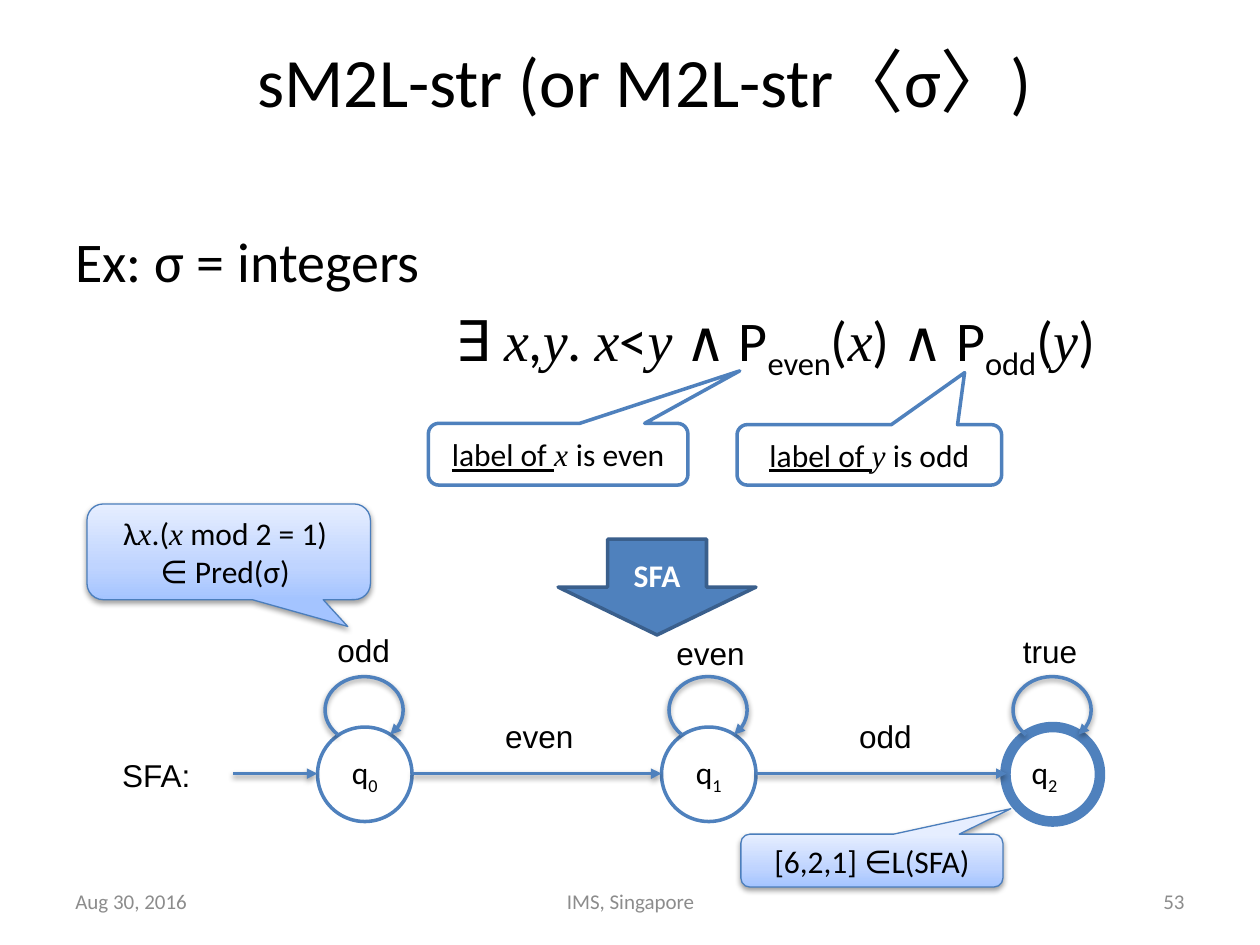
"""Build the slide on sM2L-str formulas and their symbolic automaton."""
from copy import deepcopy

from lxml import etree
from pptx import Presentation
from pptx import util as u
from pptx.dml.color import RGBColor
from pptx.enum import shapes, text
from pptx.oxml.ns import qn

PX = 9144
BLACK = RGBColor(0, 0, 0)
WHITE = RGBColor(255, 255, 255)
GREY = RGBColor(0x8C, 0x8C, 0x8C)
BLUE = RGBColor(0x4F, 0x81, 0xBD)
NAVY = RGBColor(0x3A, 0x5F, 0x8C)
RIM = RGBColor(0x4B, 0x7E, 0xBC)
SKY = [(0, RGBColor(0xA4, 0xC4, 0xFF)),
       (0.35, RGBColor(0xBF, 0xD4, 0xFF)),
       (1, RGBColor(0xE6, 0xEE, 0xFF))]

BASE = {"name": "Calibri", "size": 18, "color": BLACK}
LABEL = {"name": "Arial"}
VARIABLE = {"name": "Times New Roman", "italic": True}
UNDERLINED = {"underline": True}
SUBSCRIPT = {"baseline": -25000}
FOOTER = {"size": 12, "color": GREY}
LEFT, CENTER, RIGHT = (text.PP_ALIGN.LEFT, text.PP_ALIGN.CENTER,
                       text.PP_ALIGN.RIGHT)
TOP, MIDDLE = text.MSO_ANCHOR.TOP, text.MSO_ANCHOR.MIDDLE
KIND = shapes.MSO_SHAPE


def px(*lengths):
    """Turn px lengths into EMU."""
    return [u.Emu(length * PX) for length in lengths]


def add_span(para, words, style):
    """Add one run with its font values."""
    span = para.add_run()
    span.text = words
    for key, value in style.items():
        if key == "color":
            span.font.color.rgb = value
        elif key == "baseline":
            span.font._element.set(key, str(value))
        else:
            setattr(span.font, key, u.Pt(value) if key == "size" else value)


def write(box, paras, style=None, align=LEFT, anchor=MIDDLE, wrap=True):
    """Fill a shape with paragraphs, each a list of (words, style) spans."""
    frame = box.text_frame
    for key, value in {"word_wrap": wrap, "vertical_anchor": anchor}.items():
        setattr(frame, key, value)
    for index, spans in enumerate(paras):
        para = frame.add_paragraph() if index else frame.paragraphs[0]
        para.alignment = align
        for words, extra in spans:
            add_span(para, words, {**BASE, **(style or {}), **extra})
    return frame


def add_text(page, at, paras, **values):
    """Add a text box."""
    return write(page.shapes.add_textbox(*px(*at)), paras, **values)


def add_label(page, at, words):
    """Add an unwrapped Arial label."""
    frame = add_text(page, at, [[(words, LABEL)]], anchor=TOP, wrap=False)
    frame.auto_size = text.MSO_AUTO_SIZE.SHAPE_TO_FIT_TEXT


def set_effects(shape, shadow):
    """Replace the theme shadow by a soft one or by none."""
    effects = etree.SubElement(shape._element.spPr, qn("a:effectLst"))
    if shadow:
        outer = etree.SubElement(effects, qn("a:outerShdw"), blurRad="40000",
                                 dist="20000", dir="5400000", rotWithShape="0")
        color = etree.SubElement(outer, qn("a:srgbClr"), val="000000")
        etree.SubElement(color, qn("a:alpha"), val="38000")


def set_line(shape, color, width, arrow=False):
    """Set the outline and an optional arrowhead at its end."""
    shape.line.color.rgb = color
    shape.line.width = u.Pt(width)
    if arrow:
        etree.SubElement(shape.line._get_or_add_ln(), qn("a:tailEnd"),
                         type="triangle")


def set_gradient(shape, stops):
    """Fill a shape with an upward gradient."""
    shape.fill.gradient()
    shape.fill.gradient_angle = 90
    stop_list = shape._element.spPr.find(".//" + qn("a:gsLst"))
    while len(stop_list) < len(stops):
        stop_list.append(deepcopy(stop_list[0]))
    for stop, (position, color) in zip(shape.fill.gradient_stops, stops):
        stop.position = position
        stop.color.rgb = color


def add_shape(page, kind, at, fill, line, adjust=(), arrow=False, shadow=False):
    """Add a preset shape with its fill, line and effects."""
    shape = page.shapes.add_shape(kind, *px(*at))
    for index, value in enumerate(adjust):
        shape.adjustments[index] = value
    if fill is None:
        shape.fill.background()
    elif isinstance(fill, list):
        set_gradient(shape, fill)
    else:
        shape.fill.solid()
        shape.fill.fore_color.rgb = fill
    set_line(shape, *line, arrow)
    set_effects(shape, shadow)
    return shape


def add_callout(page, at, tip, paras, soft=False):
    """Add a rounded callout, plain white or softly shaded."""
    fill, line = (SKY, (RIM, 0.75)) if soft else (WHITE, (BLUE, 2))
    box = add_shape(page, KIND.ROUNDED_RECTANGULAR_CALLOUT, at, fill, line,
                    (*tip, 0.17), shadow=soft)
    write(box, paras, align=CENTER)


def add_arrow(page, start, end, y):
    """Add a horizontal transition arrow."""
    arrow = page.shapes.add_connector(shapes.MSO_CONNECTOR.STRAIGHT,
                                      *px(start, y, end, y))
    set_line(arrow, BLUE, 2, arrow=True)
    set_effects(arrow, True)


def add_state(page, index, left, width, align):
    """Add a numbered state with its self loop."""
    state = add_shape(page, KIND.OVAL, (left, 577, 75, 75), WHITE, (BLUE, width))
    write(state, [[("q", {}), (str(index), SUBSCRIPT)]], align=align)
    add_shape(page, KIND.ARC, (left + 6, 537, 62, 53), None, (BLUE, 2),
              (81.89, 26.04), arrow=True, shadow=True)


def add_formula(page):
    """Add the example and its indented formula."""
    x, y = ("x", VARIABLE), ("y", VARIABLE)
    formula = [("∃ ", {}), x, (",", {}), y, (". ", {}), x, ("<", {}), y,
               (" ∧ P", {}), ("even", SUBSCRIPT), ("(", {}), x,
               (") ∧ P", {}), ("odd", SUBSCRIPT), ("(", {}), y, (")", {})]
    frame = add_text(page, (50, 175, 900, 550),
                     [[("Ex: σ = integers", {})], formula],
                     style={"size": 32}, anchor=TOP)
    para = frame.paragraphs[1]
    para.space_before = u.Pt(6.4)
    para._p.get_or_add_pPr().set("marL", str(302 * PX))


def main():
    """Build and save the deck."""
    deck = Presentation()
    deck.slide_width, deck.slide_height = px(1000, 750)
    page = deck.slides.add_slide(deck.slide_layouts[5])

    title = page.shapes.title
    title.left, title.top, title.width, title.height = px(50, 25, 923, 145)
    write(title, [[("sM2L-str (or M2L-str〈σ〉)", {})]], style={"size": 39.6},
          align=CENTER, anchor=TOP)
    add_formula(page)

    for left, width, words, align in [(50, 233, "Aug 30, 2016", LEFT),
                                      (342, 317, "IMS, Singapore", CENTER),
                                      (717, 233, "53", RIGHT)]:
        add_text(page, (left, 695, width, 40), [[(words, FOOTER)]], align=align)

    for index, (width, align) in enumerate([(2, CENTER), (2, CENTER), (6, LEFT)]):
        add_state(page, index, 252 + 273 * index, width, align)
    for start, end in [(185, 252), (327, 525), (600, 799)]:
        add_arrow(page, start, end, 614)
    for left, top, width, words in [(391, 564, 78, "even"), (672, 564, 62, "odd"),
                                    (258, 496, 62, "odd"), (527, 498, 75, "even"),
                                    (802, 497, 64, "true"), (87, 595, 108, "SFA:")]:
        add_label(page, (left, top, width, 40), words)

    step = add_shape(page, KIND.DOWN_ARROW, (443, 428, 157, 76), BLUE, (NAVY, 2))
    write(step, [[("SFA", {"bold": True, "color": WHITE})]], align=CENTER)

    add_callout(page, (340, 336, 206, 49), (0.7, -1.35),
                [[("label of ", UNDERLINED), ("x ", VARIABLE), ("is even", {})]])
    add_callout(page, (585, 337, 210, 48), (0.36, -1.36),
                [[("label of ", UNDERLINED), ("y", VARIABLE), (" is odd", {})]])
    add_callout(page, (69, 400, 225, 76), (0.42, 0.78),
                [[("λ", {}), ("x", VARIABLE), (".(", {}), ("x", VARIABLE),
                  (" mod 2 = 1) ", {})], [("∈ Pred(σ) ", {})]], soft=True)
    add_callout(page, (588, 662, 208, 42), (0.53, -0.98),
                [[("[6,2,1] ∈L(SFA)", {})]], soft=True)
    deck.save("out.pptx")


if __name__ == "__main__":
    main()
